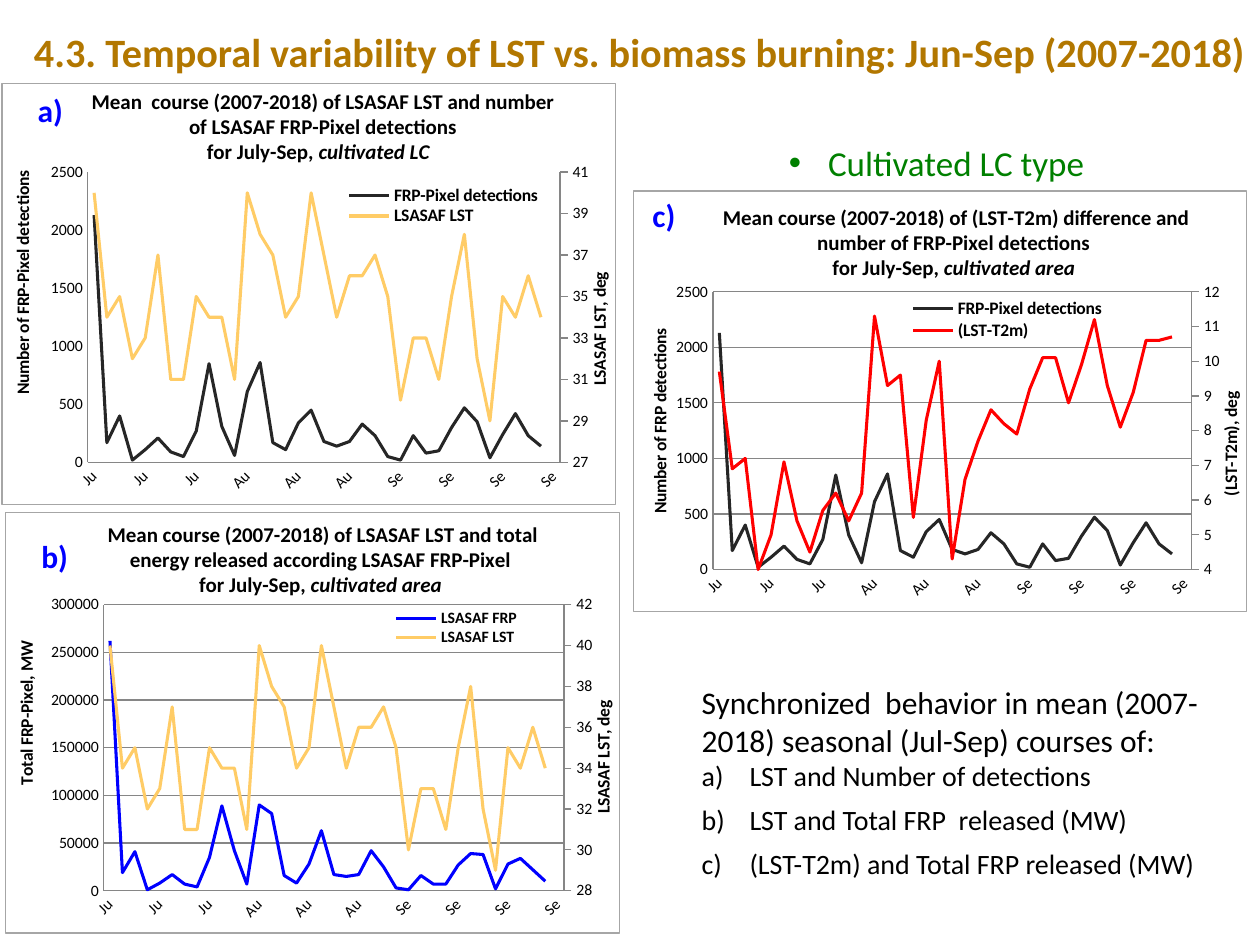
import copy

import pptx
import pptx.chart.axis
import pptx.chart.data
import pptx.dml.color
import pptx.enum.chart
import pptx.enum.text
import pptx.oxml
import pptx.oxml.ns
import pptx.util
from pptx.util import Inches

RGBColor = pptx.dml.color.RGBColor
Tick = pptx.enum.chart.XL_TICK_MARK
Align = pptx.enum.text.PP_ALIGN
qn = pptx.oxml.ns.qn

GOLD = RGBColor(0xB2, 0x77, 0x00)
GREEN = RGBColor(0x00, 0x80, 0x00)
BLUE = RGBColor(0x00, 0x00, 0xFF)
BLACK = RGBColor(0x00, 0x00, 0x00)
DARK = RGBColor(0x26, 0x26, 0x26)
SAND = RGBColor(0xFF, 0xCC, 0x66)
RED = RGBColor(0xFF, 0x00, 0x00)
GRAY = RGBColor(0x86, 0x86, 0x86)
BORDER = RGBColor(0xA6, 0xA6, 0xA6)

DAYS = [("07", 2008), ("11", 2012), ("15", 2016)]
CATS = [label for month in ("Jul", "Aug", "Sep") for day, year in DAYS
        for label in (f"{month} {day}", *(str(year + i) for i in range(3)))] + ["Sep 18"]
DETECTIONS = [2130, 170, 400, 20, 110, 210, 90, 50, 270, 850, 310, 60, 610, 860, 170, 110, 340, 450,
              180, 140, 180, 330, 230, 50, 20, 230, 80, 100, 300, 470, 350, 40, 240, 420, 230, 140, None]
LST = [40, 34, 35, 32, 33, 37, 31, 31, 35, 34, 34, 31, 40, 38, 37, 34, 35, 40, 37, 34, 36, 36, 37,
       35, 30, 33, 33, 31, 35, 38, 32, 29, 35, 34, 36, 34, None]
FRP = [262000, 19000, 41000, 1000, 8000, 17000, 7000, 4000, 35000, 89000, 42000, 7000, 90000, 81000,
       16000, 8000, 28000, 63000, 17000, 15000, 17000, 42000, 25000, 3000, 1000, 16000, 7000, 7000,
       27000, 39000, 38000, 2000, 28000, 34000, 22000, 10000, None]
LST_T2M = [9.7, 6.9, 7.2, 4, 5, 7.1, 5.4, 4.5, 5.7, 6.2, 5.4, 6.2, 11.3, 9.3, 9.6, 5.5, 8.3, 10, 4.3,
           6.6, 7.7, 8.6, 8.2, 7.9, 9.2, 10.1, 10.1, 8.8, 9.9, 11.2, 9.3, 8.1, 9.1, 10.6, 10.6, 10.7, None]

CHARTS = [
    dict(at=(0.01, 0.66), plot=(0.14, 0.21, 0.77, 0.69), grid=False, legend_size=10,
         title=["Mean  course (2007-2018) of LSASAF LST and number ", "of LSASAF FRP-Pixel detections ",
                ("for July-Sep, ", "cultivated LC   ")], title_at=(0.14, 0),
         legend=(0.55, 0.24, 0.34, 0.1),
         left=("Number of FRP-Pixel detections", (0.01, 0.2), 0, 2500, 500),
         right=("LSASAF LST, deg", (0.95, 0.44), 27, 41, 2),
         series=[("FRP-Pixel detections", DETECTIONS, DARK), ("LSASAF LST", LST, SAND)],
         tag=("a)", 0.2, 0.67)),
    dict(at=(0.04, 4.06), plot=(0.16, 0.22, 0.75, 0.68), grid=True, legend_size=9,
         title=["Mean course (2007-2018) of LSASAF LST and total energy released according LSASAF FRP-Pixel ",
                ("for July-Sep, ", "cultivated area ")], title_at=(0.16, 0.01),
         legend=(0.6, 0.23, 0.27, 0.09),
         left=("Total FRP-Pixel, MW", (0.01, 0.3), 0, 300000, 50000),
         right=("LSASAF LST, deg", (0.95, 0.44), 28, 42, 2),
         series=[("LSASAF FRP", FRP, BLUE), ("LSASAF LST", LST, SAND)],
         tag=("b)", 0.23, 4.21)),
    dict(at=(5.02, 1.51), plot=(0.13, 0.24, 0.78, 0.66), grid=True, legend_size=10,
         title=["Mean course (2007-2018) of (LST-T2m) difference and number of FRP-Pixel detections ",
                ("for July-Sep, ", "cultivated area ")], title_at=(0.14, 0.02),
         legend=(0.44, 0.25, 0.34, 0.11),
         left=("Number of FRP detections", (0.02, 0.32), 0, 2500, 500),
         right=("(LST-T2m), deg", (0.95, 0.47), 4, 12, 1),
         series=[("FRP-Pixel detections", DETECTIONS, DARK), ("(LST-T2m)", LST_T2M, RED)],
         tag=("c)", 5.08, 1.51)),
]


class Deck:
    font = "Calibri"

    def __init__(self):
        self.prs = pptx.Presentation()
        self.prs.slide_width, self.prs.slide_height = Inches(10), Inches(7.5)
        self.s = self.prs.slides.add_slide(self.prs.slide_layouts[5])

    def style(self, font, size, color=BLACK, **values):
        for name, value in {"name": self.font, "size": pptx.util.Pt(size), **values}.items():
            setattr(font, name, value)
        font.color.rgb = color

    def title(self, text):
        sp = self.s.shapes.title
        sp.left, sp.top, sp.width, sp.height = (Inches(v) for v in (0, -0.03, 10, 0.88))
        tf = sp.text_frame
        tf.vertical_anchor = pptx.enum.text.MSO_ANCHOR.MIDDLE
        p = tf.paragraphs[0]
        p.alignment = Align.RIGHT
        r = p.add_run()
        r.text = text
        self.style(r.font, 23, GOLD, bold=True)

    def text(self, at, lines, wrap=False):
        tf = self.s.shapes.add_textbox(*(Inches(v) for v in at)).text_frame
        tf.word_wrap = wrap
        tf.auto_size = pptx.enum.text.MSO_AUTO_SIZE.SHAPE_TO_FIT_TEXT
        for i, line in enumerate(lines):
            p = tf.add_paragraph() if i else tf.paragraphs[0]
            p.alignment = line.get("align", Align.LEFT)
            if "bullet" in line:
                tag, attrs, indent = line["bullet"]
                pPr = p._p.get_or_add_pPr()
                pPr.set("marL", str(Inches(indent)))
                pPr.set("indent", str(-Inches(indent)))
                if tag == "a:buChar":
                    pPr.append(self.element("a:buFont", typeface="Arial"))
                pPr.append(self.element(tag, **attrs))
            if "after" in line:
                p.space_after = pptx.util.Pt(line["after"])
            r = p.add_run()
            r.text = line["text"]
            self.style(r.font, line["size"], line.get("color", BLACK), bold=line.get("bold", False))

    def element(self, tag, **attrs):
        el = pptx.oxml.parse_xml(f"<{tag} {pptx.oxml.ns.nsdecls(tag.split(':')[0])}/>")
        for name, value in attrs.items():
            el.set(name, value)
        return el

    def place(self, parent, box, after=None):
        for old in parent.findall(qn("c:layout")):
            parent.remove(old)
        layout, manual = self.element("c:layout"), self.element("c:manualLayout")
        layout.append(manual)
        if after is None:
            manual.append(self.element("c:layoutTarget", val="inner"))
        for tag in ("c:xMode", "c:yMode"):
            manual.append(self.element(tag, val="edge"))
        for name, value in zip("xywh", box):
            manual.append(self.element(f"c:{name}", val=str(value)))
        if after is None:
            parent.insert(0, layout)
        else:
            parent.find(qn(after)).addnext(layout)

    def chart_text(self, title, lines, size, at):
        tf = title.text_frame
        for i, line in enumerate(lines):
            p = tf.add_paragraph() if i else tf.paragraphs[0]
            for j, part in enumerate([line] if isinstance(line, str) else line):
                r = p.add_run()
                r.text = part
                self.style(r.font, size, bold=True, italic=j == 1)
        self.place(title._element, at, "c:tx")
        return tf

    def value_axis(self, axis, label, at, low, high, unit):
        for name, value in dict(minimum_scale=low, maximum_scale=high, major_unit=unit).items():
            setattr(axis, name, value)
        tf = self.chart_text(axis.axis_title, [label], 10, at)
        bodyPr = tf._txBody.find(qn("a:bodyPr"))
        bodyPr.set("rot", "-5400000")
        bodyPr.set("vert", "horz")

    def second_axis(self, chart):
        line = chart.plots[0]._element
        cat, val = chart.category_axis._element, chart.value_axis._element
        copies = [copy.deepcopy(el) for el in (line, val, cat)]
        ids = {cat.find(qn("c:axId")).get("val"): "5001", val.find(qn("c:axId")).get("val"): "5002"}
        for el in copies:
            for ref in el.findall(qn("c:axId")) + el.findall(qn("c:crossAx")):
                ref.set("val", ids[ref.get("val")])
        line.remove(line.findall(qn("c:ser"))[1])
        copies[0].remove(copies[0].find(qn("c:ser")))
        line.addnext(copies[0])
        val.addnext(copies[1])
        copies[1].addnext(copies[2])
        right = pptx.chart.axis.ValueAxis(copies[1])
        pptx.chart.axis.CategoryAxis(copies[2]).visible = False
        right.has_major_gridlines = False
        right.major_tick_mark = Tick.OUTSIDE
        copies[1].find(qn("c:axPos")).set("val", "r")
        for old in copies[1].findall(qn("c:crosses")):
            copies[1].remove(old)
        copies[1].find(qn("c:crossAx")).addnext(self.element("c:crosses", val="max"))
        return right

    def chart(self, at, plot, grid, legend_size, title, title_at, legend, left, right, series, tag):
        data = pptx.chart.data.CategoryChartData()
        data.categories = CATS
        for name, values, _ in series:
            data.add_series(name, values)
        chart = self.s.shapes.add_chart(pptx.enum.chart.XL_CHART_TYPE.LINE,
                                        *(Inches(v) for v in (*at, 4.88, 3.35)), data).chart
        self.style(chart.font, 10)
        space = chart._chartSpace
        if space.find(qn("c:roundedCorners")) is None:
            space.find(qn("c:date1904")).addnext(self.element("c:roundedCorners", val="0"))
        frame, ln = self.element("c:spPr"), self.element("a:ln", w="9525")
        fill = self.element("a:solidFill")
        fill.append(self.element("a:srgbClr", val=str(BORDER)))
        ln.append(fill)
        frame.append(self.element("a:noFill"))
        frame.append(ln)
        space.find(qn("c:chart")).addnext(frame)
        chart.plots[0].vary_by_categories = False
        for ser, (_, _, color) in zip(chart.plots[0].series, series):
            ser.smooth = False
            ser.marker.style = pptx.enum.chart.XL_MARKER_STYLE.NONE
            ser.format.line.width = pptx.util.Pt(1.75)
            ser.format.line.color.rgb = color
        cat, val = chart.category_axis, chart.value_axis
        for axis in (cat, val):
            axis.major_tick_mark = axis.minor_tick_mark = Tick.NONE
            axis.format.line.color.rgb = GRAY
            self.style(axis.tick_labels.font, 9)
        val.has_major_gridlines = grid
        if grid:
            val.major_gridlines.format.line.color.rgb = GRAY
        cat._element.find(qn("c:txPr")).find(qn("a:bodyPr")).set("rot", "-2700000")
        cat._element.find(qn("c:noMultiLvlLbl")).addprevious(self.element("c:tickLblSkip", val="4"))
        self.value_axis(self.second_axis(chart), *right)
        self.value_axis(val, *left)
        self.chart_text(chart.chart_title, title, 12, title_at)
        chart.has_legend = True
        chart.legend.position = pptx.enum.chart.XL_LEGEND_POSITION.RIGHT
        chart.legend.include_in_layout = False
        self.style(chart.legend.font, legend_size, bold=True)
        self.place(chart.legend._element, legend, "c:legendPos")
        self.place(chart.plots[0]._element.getparent(), plot)
        label, x, y = tag
        self.text((x, y, 0.41, 0.4), [dict(text=label, size=18, color=BLUE, bold=True)])


def main():
    deck = Deck()
    deck.title("4.3. Temporal variability of LST vs. biomass burning: Jun-Sep (2007-2018)")
    deck.text((6.15, 1.07, 2.63, 0.44), [dict(text="Cultivated LC type ", size=20, color=GREEN, align=Align.CENTER,
                                              bullet=("a:buChar", {"char": "•"}, 0.31))])
    intro = "Synchronized  behavior in mean (2007-2018) seasonal (Jul-Sep) courses of:"
    items = ["LST and Number of detections", "LST and Total FRP  released (MW)", "(LST-T2m) and Total FRP released (MW)"]
    numbering = ("a:buAutoNum", {"type": "alphaLcParenR"}, 0.38)
    deck.text((5.47, 5.37, 4.25, 1.68), [dict(text=intro, size=18)] + [
        dict(text=item, size=16, after=6, bullet=numbering) for item in items], wrap=True)
    for chart in CHARTS:
        deck.chart(**chart)
    deck.prs.save("out.pptx")


if __name__ == "__main__":
    main()
